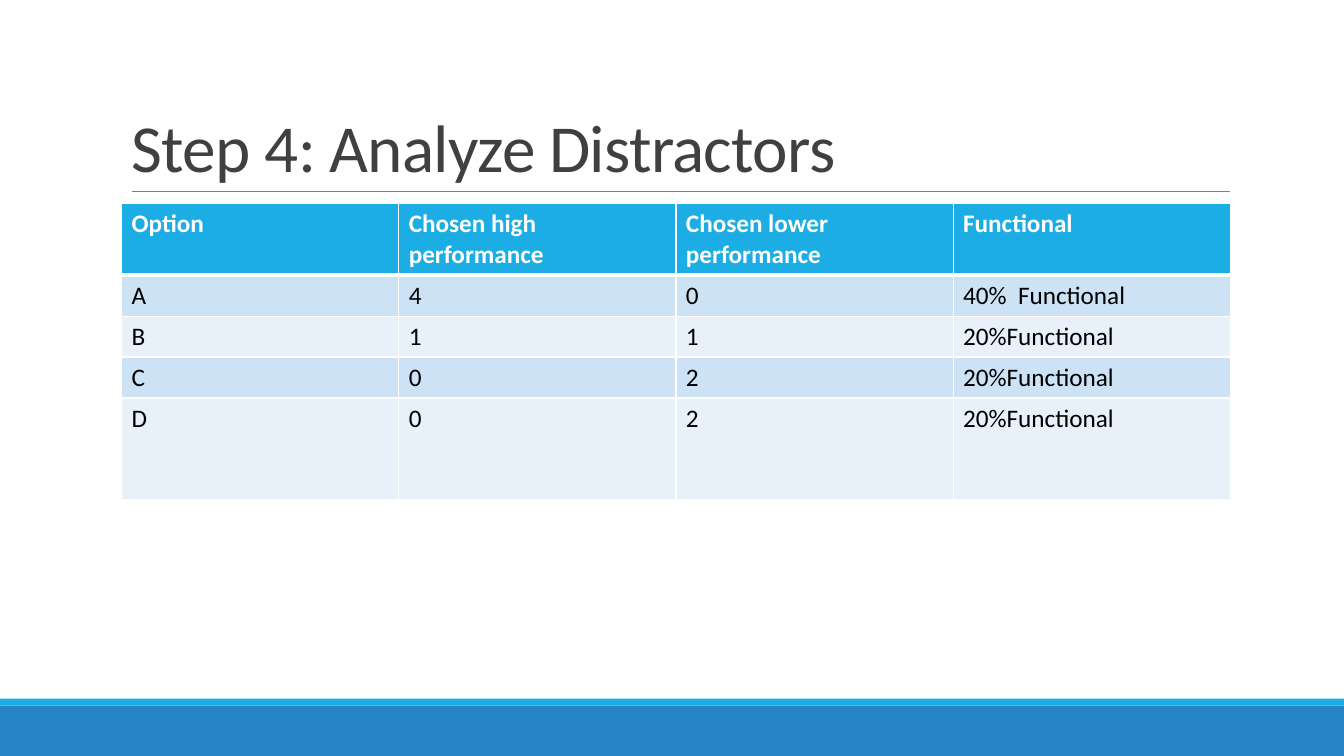
import pptx
import pptx.dml.color
import pptx.enum.shapes
import pptx.enum.text
import pptx.oxml
import pptx.oxml.ns
import pptx.util
from pptx.util import Pt

SLIDE_WIDTH, SLIDE_HEIGHT = 960, 540
FONT = "Calibri"
WHITE, BLACK = "FFFFFF", "000000"
HEADER_FILL, BAND_FILLS = "1CADE4", ("CDE3F5", "E8F1FA")
ROW_HEIGHTS = (50.2, 29.2, 29.2, 29.2, 72.8)
ROWS = (
    ("Option", "Chosen high performance", "Chosen lower performance", "Functional"),
    ("A", "4", "0", "40%  Functional"),
    ("B", "1", "1", "20%Functional"),
    ("C", "0", "2", "20%Functional"),
    ("D", "0", "2", "20%Functional"),
)


def color(value):
    return pptx.dml.color.RGBColor.from_string(value)


def add_run(paragraph, text, size, text_color, bold=False):
    run = paragraph.add_run()
    run.text = text
    run.font.name = FONT
    run.font.size = Pt(size)
    run.font.bold = bold
    run.font.color.rgb = color(text_color)
    return run


def add_bar(slide, left, top, width, height, fill):
    bar = slide.shapes.add_shape(
        pptx.enum.shapes.MSO_SHAPE.RECTANGLE, Pt(left), Pt(top), Pt(width), Pt(height))
    bar.shadow.inherit = False
    bar.fill.solid()
    bar.fill.fore_color.rgb = color(fill)
    bar.line.fill.background()


def add_footer_bars(slide, left, top, width, height):
    """Draw a thin accent bar on top of a deeper base bar."""
    accent_height = 5
    add_bar(slide, left, top + accent_height, width, height - accent_height, "2683C6")
    add_bar(slide, left, top, width, accent_height, HEADER_FILL)


def add_title(slide, left, top, width, height):
    """Fill the title placeholder and rule a line along its bottom edge."""
    title = slide.shapes.title
    title.left, title.top, title.width, title.height = map(Pt, (left, top, width, height))
    frame = title.text_frame
    frame.word_wrap = True
    frame.auto_size = pptx.enum.text.MSO_AUTO_SIZE.NONE
    frame.vertical_anchor = pptx.enum.text.MSO_ANCHOR.BOTTOM
    paragraph = frame.paragraphs[0]
    paragraph.alignment = pptx.enum.text.PP_ALIGN.LEFT
    paragraph.line_spacing = 0.85
    run = add_run(paragraph, "Step 4: Analyze Distractors", 48, "404040")
    run.font._element.set("spc", "-50")

    bottom = Pt(top + height)
    rule = slide.shapes.add_connector(
        pptx.enum.shapes.MSO_CONNECTOR.STRAIGHT, Pt(left + 7.5), bottom, Pt(left + width), bottom)
    rule.line.color.rgb = color("808080")
    rule.line.width = Pt(0.5)
    rule._element.spPr.append(pptx.oxml.parse_xml(
        f'<a:effectLst {pptx.oxml.ns.nsdecls("a")}/>'))


def set_borders(cell, top_width, bottom_width):
    properties = cell._tc.get_or_add_tcPr()
    for side, width in (("L", 1), ("R", 1), ("T", top_width), ("B", bottom_width)):
        properties.append(pptx.oxml.parse_xml(
            f'<a:ln{side} {pptx.oxml.ns.nsdecls("a")} w="{int(Pt(width))}">'
            f'<a:solidFill><a:srgbClr val="{WHITE}"/></a:solidFill></a:ln{side}>'))


def add_distractor_table(slide, left, top, width):
    table = slide.shapes.add_table(
        len(ROWS), len(ROWS[0]), Pt(left), Pt(top), Pt(width), Pt(sum(ROW_HEIGHTS))).table
    for column in table.columns:
        column.width = Pt(width / len(ROWS[0]))
    for row_index, texts in enumerate(ROWS):
        table.rows[row_index].height = Pt(ROW_HEIGHTS[row_index])
        is_header = row_index == 0
        fill = HEADER_FILL if is_header else BAND_FILLS[(row_index - 1) % 2]
        for column_index, text in enumerate(texts):
            cell = table.cell(row_index, column_index)
            set_borders(cell, 3 if row_index == 1 else 1, 3 if is_header else 1)
            cell.fill.solid()
            cell.fill.fore_color.rgb = color(fill)
            add_run(cell.text_frame.paragraphs[0], text, 18,
                    WHITE if is_header else BLACK, is_header)


def main():
    presentation = pptx.Presentation()
    presentation.slide_width = Pt(SLIDE_WIDTH)
    presentation.slide_height = Pt(SLIDE_HEIGHT)
    slide = presentation.slides.add_slide(presentation.slide_layouts[5])
    add_footer_bars(slide, 0, 499, SLIDE_WIDTH, 41)
    add_title(slide, 86.8, 22.5, 792, 114.2)
    add_distractor_table(slide, 86.8, 145.5, 792)
    presentation.save("out.pptx")


if __name__ == "__main__":
    main()
